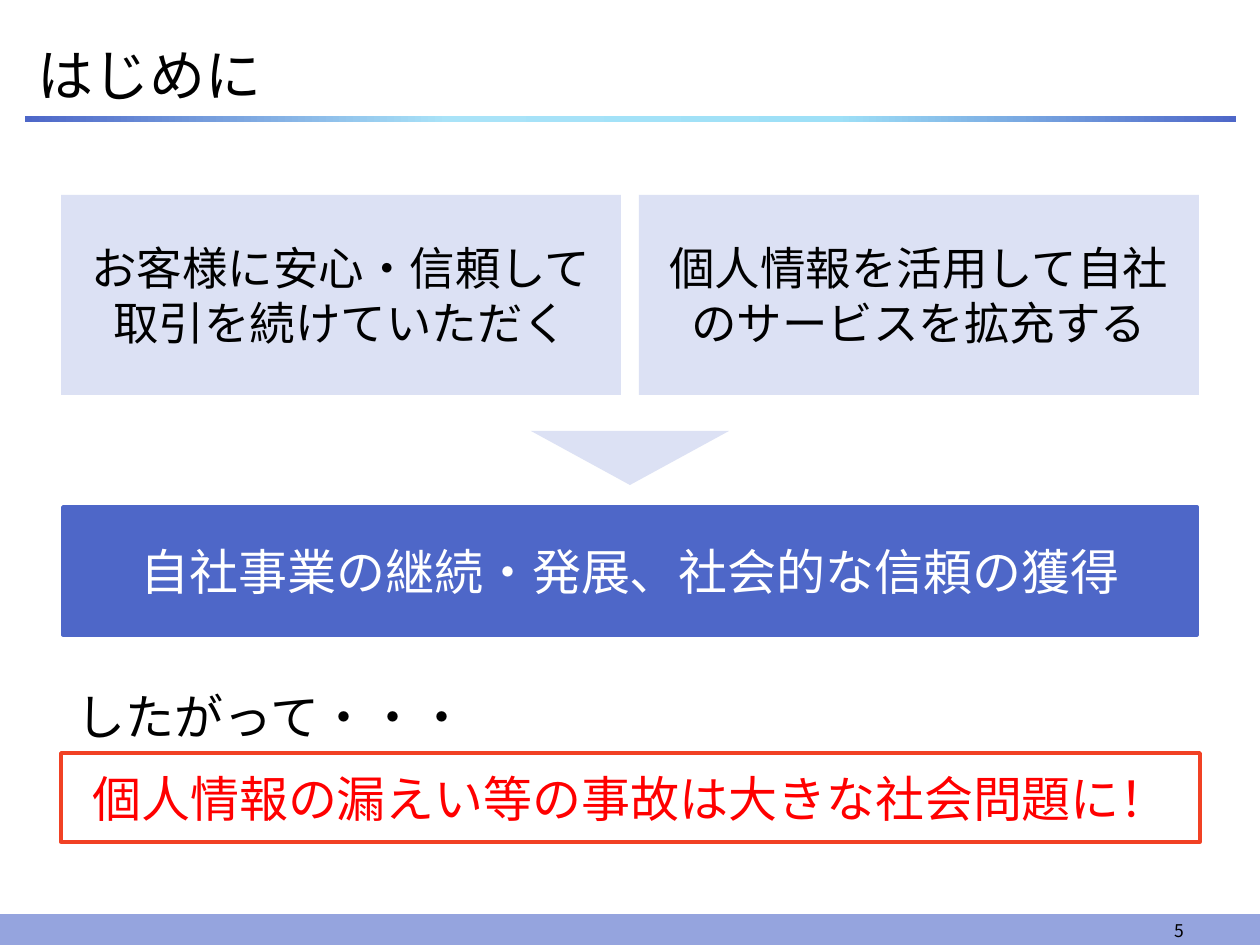
from copy import deepcopy

from pptx import Presentation
from pptx.dml.color import RGBColor
from pptx.enum.shapes import MSO_SHAPE as SHAPE
from pptx.enum.text import MSO_ANCHOR as ANCHOR, PP_ALIGN as ALIGN
from pptx.oxml.ns import qn
from pptx.util import Emu, Pt

PX = 914400 / 126
FONT = "Noto Sans CJK JP"
BLACK = RGBColor(0x00, 0x00, 0x00)
WHITE = RGBColor(0xFF, 0xFF, 0xFF)
BLUE = RGBColor(0x4E, 0x67, 0xC8)
PALE = RGBColor(0xDC, 0xE1, 0xF4)
FOOTER = RGBColor(0x95, 0xA4, 0xDE)
SKY = RGBColor(0xA9, 0xE3, 0xF8)
SKY_DEEP = RGBColor(0x9E, 0xE0, 0xF7)
ORANGE = RGBColor(0xF1, 0x41, 0x24)
RED = RGBColor(0xFF, 0x00, 0x00)


def px(n):
    return Emu(round(n * PX))


class Deck:
    def __init__(self, width, height):
        self.prs = Presentation()
        self.prs.slide_width, self.prs.slide_height = px(width), px(height)
        self.s = self.prs.slides.add_slide(self.prs.slide_layouts[6])

    def set_text(self, sp, text, size, color, align, anchor, inset):
        tf = sp.text_frame
        tf.text = text
        tf.word_wrap = True
        tf.vertical_anchor = anchor
        tf.margin_left = tf.margin_right = px(13)
        tf.margin_top = tf.margin_bottom = px(inset)
        p = tf.paragraphs[0]
        p.alignment = align
        r = p.runs[0]
        r.font.size, r.font.name = Pt(size), FONT
        r.font.color.rgb = color
        # East Asian text takes its font from a:ea
        ea = r.font._element.makeelement(qn("a:ea"), {"typeface": FONT})
        r.font._element.find(qn("a:latin")).addnext(ea)

    def text(self, box, text, size, align=ALIGN.LEFT, anchor=ANCHOR.TOP):
        sp = self.s.shapes.add_textbox(*map(px, box))
        self.set_text(sp, text, size, BLACK, align, anchor, 6)

    def shape(self, box, fill, line=None, weight=2, kind=SHAPE.RECTANGLE):
        sp = self.s.shapes.add_shape(kind, *map(px, box))
        sp.shadow.inherit = False
        sp.fill.solid()
        sp.fill.fore_color.rgb = fill
        if line is None:
            sp.line.fill.background()
        else:
            sp.line.color.rgb = line
            sp.line.width = Pt(weight)
        return sp

    def panel(self, box, text, size, color, fill, line=None, inset=20):
        sp = self.shape(box, fill, line)
        self.set_text(sp, text, size, color, ALIGN.CENTER, ANCHOR.MIDDLE, inset)

    def gradient_bar(self, box, stops):
        sp = self.shape(box, BLUE)
        sp.fill.gradient()
        sp.fill.gradient_angle = 0
        gs_list = sp._element.spPr.find(".//" + qn("a:gsLst"))
        while len(gs_list) < len(stops):
            gs_list.append(deepcopy(gs_list[0]))
        for stop, (position, color) in zip(sp.fill.gradient_stops, stops):
            stop.position = position
            stop.color.rgb = color


def main():
    deck = Deck(1260, 945)

    # Footer band, title and rule
    deck.shape((0, 915, 1260, 30), FOOTER, FOOTER, 0.75)
    deck.gradient_bar((25, 116, 1211, 6),
                      [(0, BLUE), (0.35, SKY), (0.67, SKY_DEEP), (1, BLUE)])
    deck.text((25, 33, 1211, 82), "はじめに", 32, anchor=ANCHOR.MIDDLE)
    deck.text((903, 908, 294, 39), "5", 10, ALIGN.RIGHT, ANCHOR.BOTTOM)

    # Two aims side by side
    aims = ["お客様に安心・信頼して取引を続けていただく",
            "個人情報を活用して自社のサービスを拡充する"]
    for i, aim in enumerate(aims):
        deck.panel((61 + 578 * i, 195, 560, 200), aim, 26, BLACK, PALE)

    # Their outcome
    deck.shape((531, 431, 198, 54), PALE, kind=SHAPE.FLOWCHART_MERGE)
    deck.panel((63, 507, 1134, 128), "自社事業の継続・発展、社会的な信頼の獲得",
               28, WHITE, BLUE, BLUE)

    # Warning
    deck.text((64, 680, 891, 72), "したがって・・・", 28)
    deck.panel((61, 753, 1139, 89), "個人情報の漏えい等の事故は大きな社会問題に！",
               28, RED, WHITE, ORANGE, inset=15)

    deck.prs.save("out.pptx")


if __name__ == "__main__":
    main()
